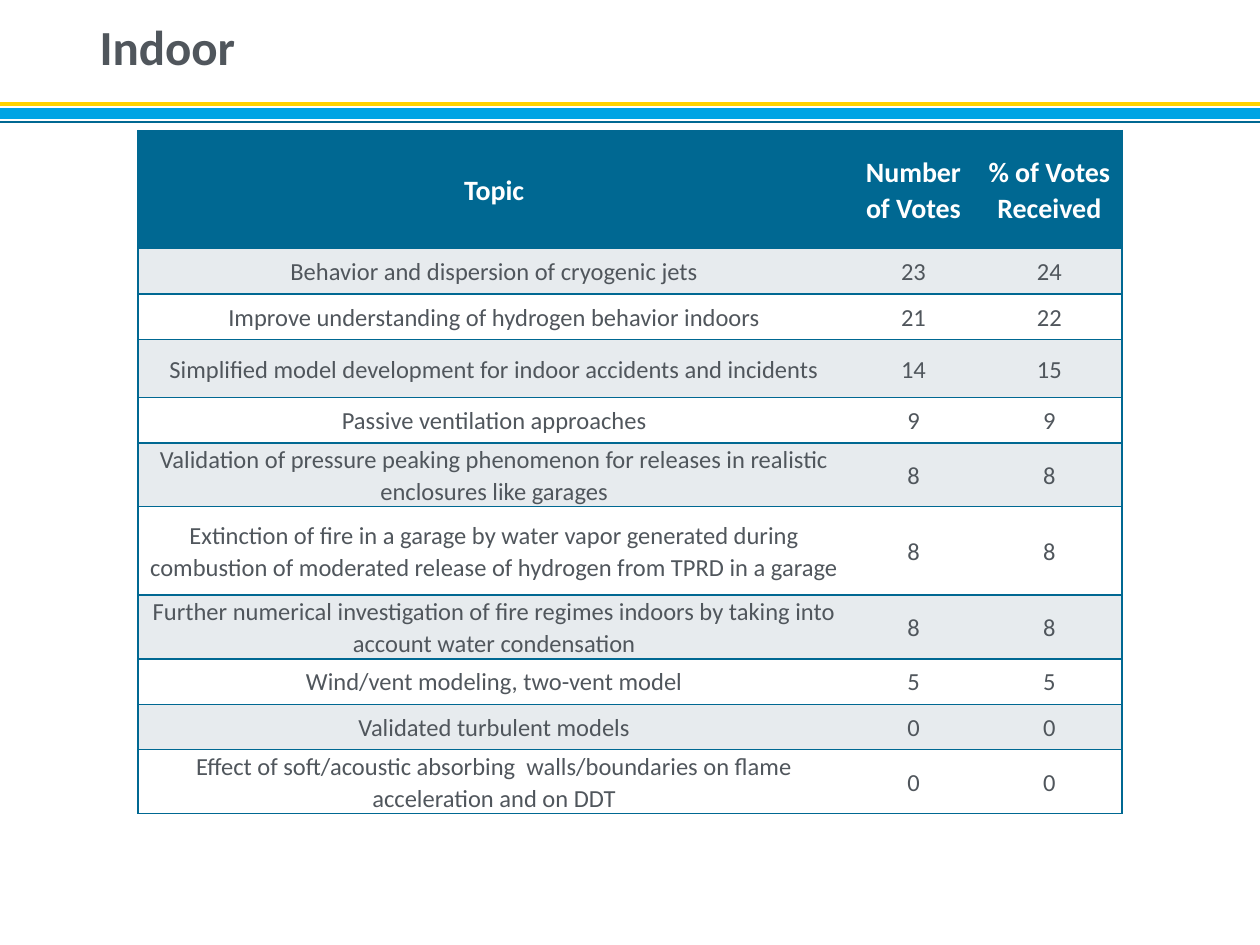
"""Build the Indoor slide: ranked research topics with their votes."""
from dataclasses import dataclass

from lxml import etree
from pptx import Presentation
from pptx.dml.color import RGBColor
from pptx.enum.shapes import MSO_CONNECTOR
from pptx.enum.text import MSO_ANCHOR, MSO_AUTO_SIZE, PP_ALIGN
from pptx.oxml.ns import qn
from pptx.util import Pt

STRAIGHT = MSO_CONNECTOR.STRAIGHT
MIDDLE = MSO_ANCHOR.MIDDLE
NO_FIT = MSO_AUTO_SIZE.NONE
LEFT, CENTER = PP_ALIGN.LEFT, PP_ALIGN.CENTER
TITLE_ONLY = 5


@dataclass(frozen=True)
class Theme:
    font: str = "Calibri"
    ink: str = "50565C"
    white: str = "FFFFFF"
    band: str = "E7EBEE"
    teal: str = "006892"
    blue: str = "00A4E4"
    yellow: str = "FFD200"
    title_size: int = 28
    head_size: int = 16
    body_size: int = 14


T = Theme()


def style(p, size, color, bold, align, spacing):
    p.alignment, p.line_spacing = align, spacing
    p.font.name, p.font.size, p.font.bold = T.font, Pt(size), bold
    p.font.color.rgb = RGBColor.from_string(color)


def add_border(cell, side, visible):
    ln = etree.SubElement(cell._tc.get_or_add_tcPr(), qn(f"a:ln{side}"), w=str(Pt(1)))
    if visible:
        fill = etree.SubElement(ln, qn("a:solidFill"))
        etree.SubElement(fill, qn("a:srgbClr"), val=T.teal)
    else:
        etree.SubElement(ln, qn("a:noFill"))


prs = Presentation()
prs.slide_width, prs.slide_height = Pt(720), Pt(540)
s = prs.slides.add_slide(prs.slide_layouts[TITLE_ONLY])

for y, color, width in [(64.8, T.blue, 6), (69.8, T.teal, 1.5), (59.4, T.yellow, 2.25)]:
    rule = s.shapes.add_connector(STRAIGHT, Pt(0), Pt(y), Pt(720), Pt(y))
    rule.line.color.rgb = RGBColor.from_string(color)
    rule.line.width = Pt(width)
    etree.SubElement(rule._element.spPr, qn("a:effectLst"))

title = s.shapes.title
title.left, title.top, title.width, title.height = Pt(49.7), Pt(0), Pt(620.6), Pt(56.9)
tf = title.text_frame
tf.text = "Indoor"
tf.auto_size, tf.vertical_anchor = NO_FIT, MIDDLE
style(tf.paragraphs[0], T.title_size, T.ink, True, LEFT, 0.9)

rows = [
    (67.5, "Topic", "Number of Votes", "% of Votes Received"),
    (26, "Behavior and dispersion of cryogenic jets", 23, 24),
    (26, "Improve understanding of hydrogen behavior indoors", 21, 22),
    (33, "Simplified model development for indoor accidents and incidents", 14, 15),
    (26, "Passive ventilation approaches", 9, 9),
    (33, "Validation of pressure peaking phenomenon for releases in realistic "
         "enclosures like garages", 8, 8),
    (50.4, "Extinction of fire in a garage by water vapor generated during "
           "combustion of moderated release of hydrogen from TPRD in a garage", 8, 8),
    (33, "Further numerical investigation of fire regimes indoors by taking into "
         "account water condensation", 8, 8),
    (26, "Wind/vent modeling, two-vent model", 5, 5),
    (26, "Validated turbulent models", 0, 0),
    (33, "Effect of soft/acoustic absorbing  walls/boundaries on flame "
         "acceleration and on DDT", 0, 0),
]
widths = [407.2, 72, 83.3]
heights = [row[0] for row in rows]

table = s.shapes.add_table(len(rows), len(widths), Pt(78.8), Pt(74.6),
                           Pt(sum(widths)), Pt(sum(heights))).table
for column, width in zip(table.columns, widths):
    column.width = Pt(width)

for i, (height, *values) in enumerate(rows):
    table.rows[i].height = Pt(height)
    if i == 0:
        fill, color, size = T.teal, T.white, T.head_size
    else:
        fill, color, size = T.band if i % 2 else T.white, T.ink, T.body_size
    for j, value in enumerate(values):
        cell = table.cell(i, j)
        cell.text = str(value)
        cell.vertical_anchor = MIDDLE
        cell.margin_left = cell.margin_right = Pt(5)
        cell.margin_top = cell.margin_bottom = Pt(0)
        style(cell.text_frame.paragraphs[0], size, color, i == 0, CENTER, 1.07)
        add_border(cell, "L", j == 0)
        add_border(cell, "R", j == len(widths) - 1)
        add_border(cell, "T", True)
        add_border(cell, "B", True)
        cell.fill.solid()
        cell.fill.fore_color.rgb = RGBColor.from_string(fill)

prs.save("out.pptx")
